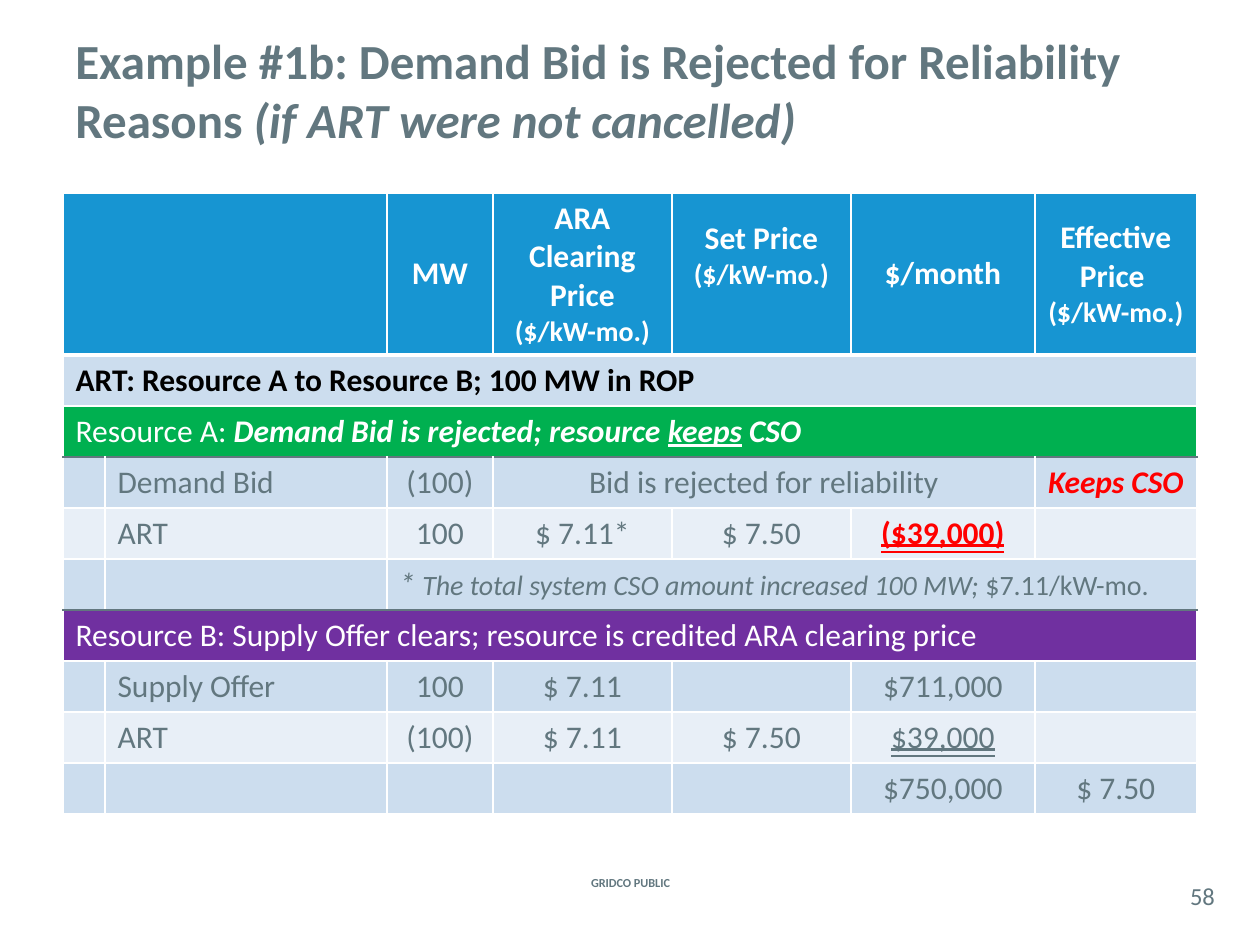
from dataclasses import dataclass
from typing import NamedTuple, Optional

from lxml import etree
from pptx import Presentation
from pptx.dml.color import RGBColor
from pptx.enum.text import MSO_ANCHOR, MSO_UNDERLINE, PP_ALIGN
from pptx.oxml.ns import qn
from pptx.util import Emu, Pt

LEFT, CENTER = PP_ALIGN.LEFT, PP_ALIGN.CENTER
TOP, MIDDLE = MSO_ANCHOR.TOP, MSO_ANCHOR.MIDDLE
SINGLE, DOUBLE = MSO_UNDERLINE.SINGLE_LINE, MSO_UNDERLINE.DOUBLE_LINE

FONT = "Calibri"
SLATE, WHITE, BLACK, RED = "62777F", "FFFFFF", "000000", "FF0000"
BLUE, GREEN, PURPLE = "1795D2", "00B050", "7030A0"
BAND, LIGHT = "CCDDEE", "E8EFF7"
PX_PER_INCH = 126
COLUMNS = [42, 282, 106, 179, 179, 184, 162]
HEADER_HEIGHT, ROW_HEIGHT = 162, 51


class Run(NamedTuple):
    text: str
    size: Optional[int] = None
    bold: Optional[bool] = None
    italic: Optional[bool] = None
    underline: Optional[MSO_UNDERLINE] = None


@dataclass
class Line:
    runs: list[Run]
    size: int = 18
    color: str = SLATE
    bold: bool = False
    italic: bool = False
    align: PP_ALIGN = CENTER


@dataclass
class Cell:
    column: int
    lines: list[Line]
    span: int = 1
    bottom_margin: int = 6


@dataclass
class Row:
    fill: str
    cells: list[Cell]
    top: str = WHITE
    bottom: str = WHITE
    bottom_width: int = 1
    anchor: MSO_ANCHOR = TOP


def px(length: int) -> Emu:
    return Emu(round(length * 914400 / PX_PER_INCH))


def rgb(color: str) -> RGBColor:
    return RGBColor.from_string(color)


def write_lines(text_frame, lines: list[Line]) -> None:
    for index, line in enumerate(lines):
        paragraph = text_frame.paragraphs[0] if index == 0 else text_frame.add_paragraph()
        paragraph.alignment = line.align
        font = paragraph.font
        font.name, font.size = FONT, Pt(line.size)
        font.bold, font.italic = line.bold, line.italic
        font.color.rgb = rgb(line.color)
        for part in line.runs:
            run = paragraph.add_run()
            run.text = part.text
            if part.size:
                run.font.size = Pt(part.size)
            run.font.bold, run.font.italic = part.bold, part.italic
            run.font.underline = part.underline


def add_text(slide, box: tuple[int, int, int, int], line: Line, inset: bool = True) -> None:
    text_frame = slide.shapes.add_textbox(*map(px, box)).text_frame
    text_frame.word_wrap = True
    text_frame.vertical_anchor = MIDDLE
    if not inset:
        text_frame.margin_left = text_frame.margin_right = 0
        text_frame.margin_top = text_frame.margin_bottom = 0
    write_lines(text_frame, [line])


def set_border(cell, side: str, color: str, width: int = 1) -> None:
    properties = cell._tc.get_or_add_tcPr()
    border = etree.SubElement(properties, qn(f"a:ln{side}"), w=str(Pt(width)))
    fill = etree.SubElement(border, qn("a:solidFill"))
    etree.SubElement(fill, qn("a:srgbClr"), val=color)


def fill_row(table, index: int, row: Row) -> None:
    for cell in table.rows[index].cells:
        set_border(cell, "L", WHITE)
        set_border(cell, "R", WHITE)
        set_border(cell, "T", row.top, 3 if index == 1 else 1)
        set_border(cell, "B", row.bottom, row.bottom_width)
        cell.fill.solid()
        cell.fill.fore_color.rgb = rgb(row.fill)
        cell.vertical_anchor = row.anchor
    for item in row.cells:
        cell = table.cell(index, item.column)
        if item.span > 1:
            cell.merge(table.cell(index, item.column + item.span - 1))
        cell.margin_bottom = px(item.bottom_margin)
        if item.column == len(COLUMNS) - 1:
            cell.margin_left = cell.margin_right = px(10)
        write_lines(cell.text_frame, item.lines)


def add_table(slide, left: int, top: int, rows: list[Row]) -> None:
    heights = [HEADER_HEIGHT] + [ROW_HEIGHT] * (len(rows) - 1)
    table = slide.shapes.add_table(len(rows), len(COLUMNS), px(left), px(top),
                                   px(sum(COLUMNS)), px(sum(heights))).table
    table.first_row = table.horz_banding = False
    for column, width in zip(table.columns, COLUMNS):
        column.width = px(width)
    for index, (row, height) in enumerate(zip(rows, heights)):
        table.rows[index].height = px(height)
        fill_row(table, index, row)


def heading(column: int, *texts: str, bottom_margin: int = 6) -> Cell:
    """Header cell; units in parentheses are set smaller."""
    lines = [Line([Run(text)], 16 if text.startswith("(") else 18, WHITE, bold=True)
             for text in texts]
    return Cell(column, lines, bottom_margin=bottom_margin)


def banner(*runs: Run, color: str = WHITE, bold: bool = False) -> Cell:
    return Cell(0, [Line(list(runs), color=color, bold=bold, align=LEFT)], span=7)


def label(text: str) -> Cell:
    return Cell(1, [Line([Run(text)], align=LEFT)])


def value(column: int, text: str, span: int = 1, **style) -> Cell:
    return Cell(column, [Line([Run(text)], **style)], span)


def total(text: str, **style) -> Cell:
    return Cell(5, [Line([Run(text, underline=DOUBLE)], **style)])


UNIT = "($/kW-mo.)"
NOTE = Line([Run("* ", size=18),
             Run("The total system CSO amount increased 100 MW; "),
             Run("$7.11/kW-mo.", italic=False)], size=16, italic=True, align=LEFT)
ROWS = [
    Row(BLUE, [Cell(0, [], span=2), heading(2, "MW"),
               heading(3, "ARA Clearing Price", UNIT),
               heading(4, "Set Price", UNIT, bottom_margin=43),
               heading(5, "$/month"), heading(6, "Effective Price ", UNIT)],
        bottom_width=3, anchor=MIDDLE),
    Row(BAND, [banner(Run("ART: Resource A to Resource B; 100 MW in ROP"),
                      color=BLACK, bold=True)]),
    # Resource A
    Row(GREEN, [banner(Run("Resource A: "),
                       Run("Demand Bid is rejected; resource ", bold=True, italic=True),
                       Run("keeps", bold=True, italic=True, underline=SINGLE),
                       Run(" CSO", bold=True, italic=True))], bottom=SLATE),
    Row(BAND, [label("Demand Bid"), value(2, "(100)"),
               value(3, "Bid is rejected for reliability", span=3),
               value(6, "Keeps CSO", color=RED, bold=True, italic=True)], top=SLATE),
    Row(LIGHT, [label("ART"), value(2, "100"), value(3, "$ 7.11*"), value(4, "$ 7.50"),
                total("($39,000)", color=RED, bold=True)]),
    Row(BAND, [Cell(2, [NOTE], span=5)], bottom=SLATE),
    # Resource B
    Row(PURPLE, [banner(Run("Resource B: Supply Offer clears; resource is credited "
                            "ARA clearing price"))], top=SLATE),
    Row(BAND, [label("Supply Offer"), value(2, "100"), value(3, "$ 7.11"),
               value(5, "$711,000")]),
    Row(LIGHT, [label("ART"), value(2, "(100)"), value(3, "$ 7.11"), value(4, "$ 7.50"),
                total("$39,000")]),
    Row(BAND, [value(5, "$750,000"), value(6, "$ 7.50")]),
]


def main() -> None:
    presentation = Presentation()
    presentation.slide_width, presentation.slide_height = px(1260), px(945)
    slide = presentation.slides.add_slide(presentation.slide_layouts[6])

    # Footer and page number
    add_text(slide, (538, 872, 185, 21), Line([Run("GRIDCO PUBLIC")], 7, bold=True))
    add_text(slide, (1176, 877, 53, 37), Line([Run("58")], 14), inset=False)

    # Title
    add_text(slide, (63, 10, 1134, 158), Line(
        [Run("Example #1b: Demand Bid is Rejected for Reliability Reasons "),
         Run("(if ART were not cancelled)", italic=True)], 28, bold=True, align=LEFT))

    # Settlement table
    add_table(slide, 63, 193, ROWS)
    presentation.save("out.pptx")


if __name__ == "__main__":
    main()
